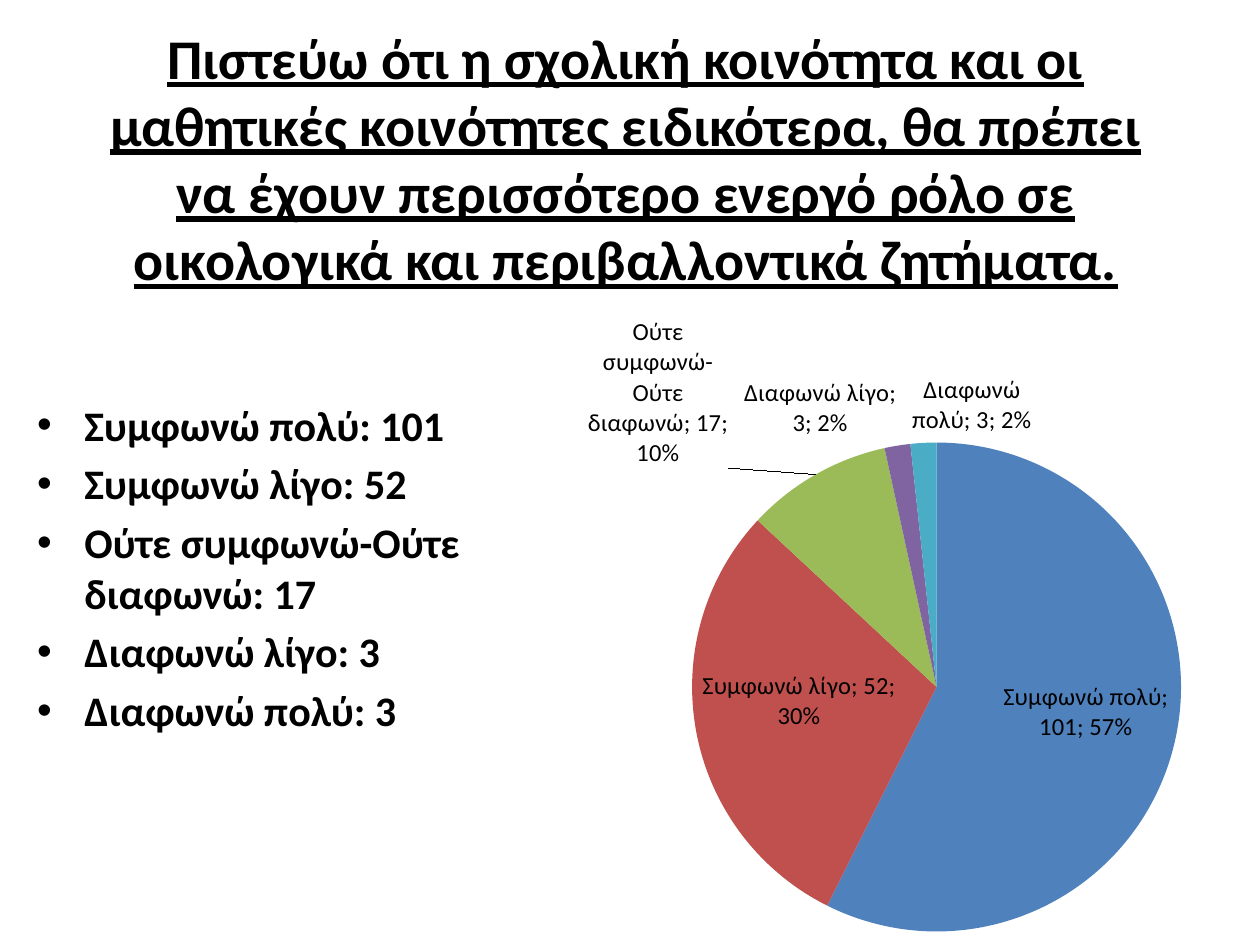
from lxml.etree import SubElement, fromstring
from pptx import Presentation
from pptx.chart.data import CategoryChartData
from pptx.dml.color import RGBColor
from pptx.enum.chart import XL_CHART_TYPE as ChartType, XL_LABEL_POSITION as LabelPosition
from pptx.enum.text import MSO_ANCHOR as Anchor, PP_ALIGN as Align
from pptx.oxml.ns import nsdecls, qn
from pptx.util import Cm, Pt

FONT = "Calibri"
BLACK = RGBColor(0x00, 0x00, 0x00)
SLICE_COLORS = [
    RGBColor(0x4F, 0x81, 0xBD),
    RGBColor(0xC0, 0x50, 0x4D),
    RGBColor(0x9B, 0xBB, 0x59),
    RGBColor(0x80, 0x64, 0xA2),
    RGBColor(0x4B, 0xAC, 0xC6),
]
TITLE = (
    "Πιστεύω ότι η σχολική κοινότητα και οι μαθητικές κοινότητες ειδικότερα, "
    "θα πρέπει να έχουν περισσότερο ενεργό ρόλο σε οικολογικά και "
    "περιβαλλοντικά ζητήματα."
)
ANSWERS = {
    "Συμφωνώ πολύ": 101,
    "Συμφωνώ λίγο": 52,
    "Ούτε συμφωνώ-Ούτε διαφωνώ": 17,
    "Διαφωνώ λίγο": 3,
    "Διαφωνώ πολύ": 3,
}
# Plot area as fractions of the chart frame
PIE_LAYOUT = {"x": 0.28, "y": 0.24, "w": 0.62, "h": 0.74}


def style_font(font, size, bold=False):
    font.name = FONT
    font.size = Pt(size)
    font.bold = bold
    font.color.rgb = BLACK


def add_text(slide, left, top, width, height, text, size):
    shape = slide.shapes.add_textbox(left, top, width, height)
    text_frame = shape.text_frame
    text_frame.word_wrap = True
    text_frame.text = text
    for paragraph in text_frame.paragraphs:
        for run in paragraph.runs:
            style_font(run.font, size, bold=True)
    return text_frame


def add_title(slide):
    text_frame = add_text(slide, Cm(1.3), Cm(0), Cm(22.63), Cm(6.35), TITLE, 32)
    text_frame.vertical_anchor = Anchor.MIDDLE
    paragraph = text_frame.paragraphs[0]
    paragraph.alignment = Align.CENTER
    paragraph.runs[0].font.underline = True


def add_answer_list(slide):
    lines = "\n".join(f"{answer}: {count}" for answer, count in ANSWERS.items())
    text_frame = add_text(slide, Cm(0.5), Cm(7.92), Cm(9.6), Cm(7.8), lines, 24)
    indent = Cm(0.95)
    for paragraph in text_frame.paragraphs:
        paragraph.space_before = Pt(4.8)
        properties = paragraph._p.get_or_add_pPr()
        properties.set("marL", str(indent))
        properties.set("indent", str(-indent))
        SubElement(properties, qn("a:buFont"), typeface="Arial")
        SubElement(properties, qn("a:buChar"), char="•")


def set_pie_layout(chart):
    plot_area = chart._chartSpace.chart.plotArea
    for old_layout in plot_area.findall(qn("c:layout")):
        plot_area.remove(old_layout)
    modes = '<c:layoutTarget val="inner"/><c:xMode val="edge"/><c:yMode val="edge"/>'
    sizes = "".join(f'<c:{key} val="{value}"/>' for key, value in PIE_LAYOUT.items())
    plot_area.insert(0, fromstring(
        f'<c:layout {nsdecls("c")}><c:manualLayout>{modes}{sizes}'
        "</c:manualLayout></c:layout>"
    ))


def add_pie_labels(plot):
    plot.has_data_labels = True
    labels = plot.data_labels
    style_font(labels.font, 14)
    labels.show_category_name = True
    labels.show_value = True
    labels.show_percentage = True
    labels.position = LabelPosition.BEST_FIT
    # The separator belongs just before the leader line switch
    element = labels._element
    for old_switch in element.findall(qn("c:showLeaderLines")):
        element.remove(old_switch)
    SubElement(element, qn("c:separator")).text = "; "
    SubElement(element, qn("c:showLeaderLines"), val="1")


def add_pie(slide):
    chart_data = CategoryChartData()
    chart_data.categories = list(ANSWERS)
    chart_data.add_series("Series 1", list(ANSWERS.values()))
    chart = slide.shapes.add_chart(
        ChartType.PIE, Cm(9.5), Cm(5.72), Cm(15.9), Cm(13.33), chart_data
    ).chart
    chart.has_title = False
    chart.has_legend = False
    style_font(chart.font, 10)
    set_pie_layout(chart)
    plot = chart.plots[0]
    plot.vary_by_categories = True
    for index, color in enumerate(SLICE_COLORS):
        fill = plot.series[0].points[index].format.fill
        fill.solid()
        fill.fore_color.rgb = color
    add_pie_labels(plot)


def main():
    presentation = Presentation()
    presentation.slide_width = Cm(25.4)
    presentation.slide_height = Cm(19.05)
    slide = presentation.slides.add_slide(presentation.slide_layouts[6])
    add_title(slide)
    add_answer_list(slide)
    add_pie(slide)
    presentation.save("out.pptx")


if __name__ == "__main__":
    main()
